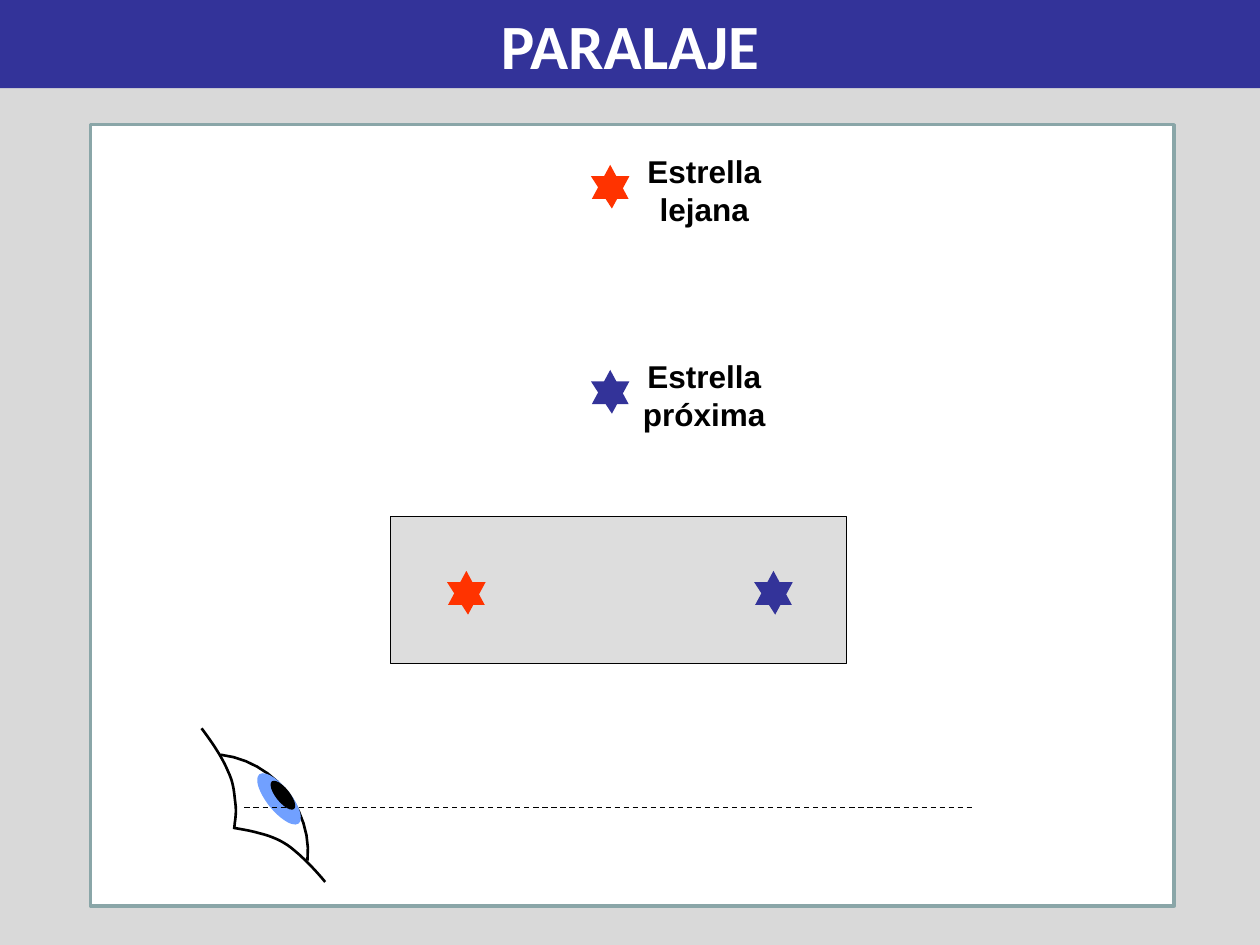
from pptx import Presentation
from pptx.dml.color import RGBColor
from pptx.enum.dml import MSO_LINE
from pptx.enum.shapes import MSO_CONNECTOR, MSO_SHAPE
from pptx.enum.text import MSO_ANCHOR, PP_ALIGN
from pptx.oxml.ns import qn
from pptx.util import Pt
from lxml.etree import SubElement

BLUE = RGBColor(0x33, 0x33, 0x99)
RED = RGBColor(0xFF, 0x33, 0x00)
IRIS = RGBColor(0x71, 0xA0, 0xFF)
BLACK = RGBColor(0, 0, 0)
WHITE = RGBColor(0xFF, 0xFF, 0xFF)
PALE = RGBColor(0xD9, 0xD9, 0xD9)
GREY = RGBColor(0xDD, 0xDD, 0xDD)
FRAME = RGBColor(0x8A, 0xA6, 0xA8)

STAR = [
    [(11, 0), (0.5, 19.5), (21.5, 19.5)],
    [(0, 6.5), (12, 25), (22, 6.5)],
]
UPPER = [(0, 0), (6.5, 8.6), (12.2, 17.3), (15.1, 24.5), (18.7, 31.7),
         (18.7, 38.2), (19.4, 43.2), (20.2, 49), (18.7, 54.7), (18.7, 57.6)]
LOWER = [(70.6, 87.8), (64.1, 79.9), (56.9, 72.7), (50.4, 67.7), (44.6, 63.4),
         (38.2, 61.2), (32.4, 59.8), (27.4, 58.3), (21.6, 57.6), (18.7, 56.9)]
FRONT = [(60.5, 75.6), (63.4, 46.1), (41, 18.7), (10.8, 15.1)]


def paint(shape, fill=None, line=None, width=0.75):
    shape.shadow.inherit = False
    if fill is None:
        shape.fill.background()
    else:
        shape.fill.solid()
        shape.fill.fore_color.rgb = fill
    if line is None:
        shape.line.fill.background()
    else:
        shape.line.color.rgb = line
        shape.line.width = Pt(width)


def place(shape, left, top, width, height):
    shape.left, shape.top = Pt(left), Pt(top)
    shape.width, shape.height = Pt(width), Pt(height)


def write(shape, text, font, size, color):
    frame = shape.text_frame
    frame.text = text
    frame.word_wrap = True
    frame.vertical_anchor = MSO_ANCHOR.TOP
    para = frame.paragraphs[0]
    para.alignment = PP_ALIGN.CENTER
    face = para.runs[0].font
    face.name, face.size, face.bold = font, Pt(size), True
    face.color.rgb = color


def outline(slide, left, top, points, close):
    spots = [(Pt(left + x), Pt(top + y)) for x, y in points]
    pen = slide.shapes.build_freeform(*spots[0])
    pen.add_line_segments(spots[1:], close=close)
    return pen.convert_to_shape()


def smooth(knots, steps=12):
    points = [knots[0]]
    for first in range(0, len(knots) - 1, 3):
        part = knots[first:first + 4]
        for step in range(1, steps + 1):
            t = step / steps
            mix = ((1 - t) ** 3, 3 * t * (1 - t) ** 2, 3 * t * t * (1 - t), t ** 3)
            points.append(tuple(sum(m * p[axis] for m, p in zip(mix, part))
                                for axis in (0, 1)))
    return points


def add_title(slide, left, top, width, height):
    title = slide.shapes.title
    place(title, left, top, width, height)
    title.fill.solid()
    title.fill.fore_color.rgb = BLUE
    write(title, "PARALAJE", "Calibri", 36, WHITE)


def add_panel(slide, left, top, width, height, fill, line, weight):
    panel = slide.shapes.add_shape(
        MSO_SHAPE.RECTANGLE, Pt(left), Pt(top), Pt(width), Pt(height))
    paint(panel, fill, line, weight)


def add_star(slide, left, top, color):
    for points in STAR:
        paint(outline(slide, left, top, points, True), color)


def add_label(slide, left, top, text, color):
    add_star(slide, left + 1.5, top + 11, color)
    box = slide.shapes.add_textbox(Pt(left), Pt(top), Pt(132.5), Pt(50.4))
    write(box, text, "Arial", 18, BLACK)


def add_view(slide, left, top, width, height):
    add_panel(slide, left, top, width, height, GREY, BLACK, 0.75)
    add_star(slide, left + 32.3, top + 31, RED)
    add_star(slide, left + 207.8, top + 31, BLUE)


def add_eye(slide, left, top):
    for knots in (LOWER, FRONT, UPPER):
        paint(outline(slide, left, top, smooth(knots), False), None, BLACK, 1.5)
    for x, y, width, height, color in (
            (37.4, 22.3, 13.7, 36, IRIS), (42.5, 28.1, 7.9, 20.2, BLACK)):
        oval = slide.shapes.add_shape(
            MSO_SHAPE.OVAL, Pt(left + x), Pt(top + y), Pt(width), Pt(height))
        oval.rotation = 141.2
        paint(oval, color)


def add_path(slide, left, top, width):
    path = slide.shapes.add_connector(
        MSO_CONNECTOR.STRAIGHT, Pt(left), Pt(top), Pt(left + width), Pt(top))
    path.line.color.rgb = BLACK
    path.line.width = Pt(0.75)
    path.line.dash_style = MSO_LINE.DASH
    SubElement(path._element.spPr, qn("a:effectLst"))


def main():
    deck = Presentation()
    deck.slide_width, deck.slide_height = Pt(720), Pt(540)
    slide = deck.slides.add_slide(deck.slide_layouts[5])
    slide.background.fill.solid()
    slide.background.fill.fore_color.rgb = PALE
    add_title(slide, 0, 0, 720, 50.4)
    add_panel(slide, 51.8, 71.3, 619.2, 446.4, WHITE, FRAME, 2)
    add_view(slide, 223.2, 295.2, 260.6, 84.2)
    add_eye(slide, 115.2, 416.2)
    add_label(slide, 336.2, 200.4, "Estrella próxima", BLUE)
    add_label(slide, 336.2, 83.2, "Estrella lejana", RED)
    add_path(slide, 139.7, 461.5, 416)
    deck.save("out.pptx")


if __name__ == "__main__":
    main()
